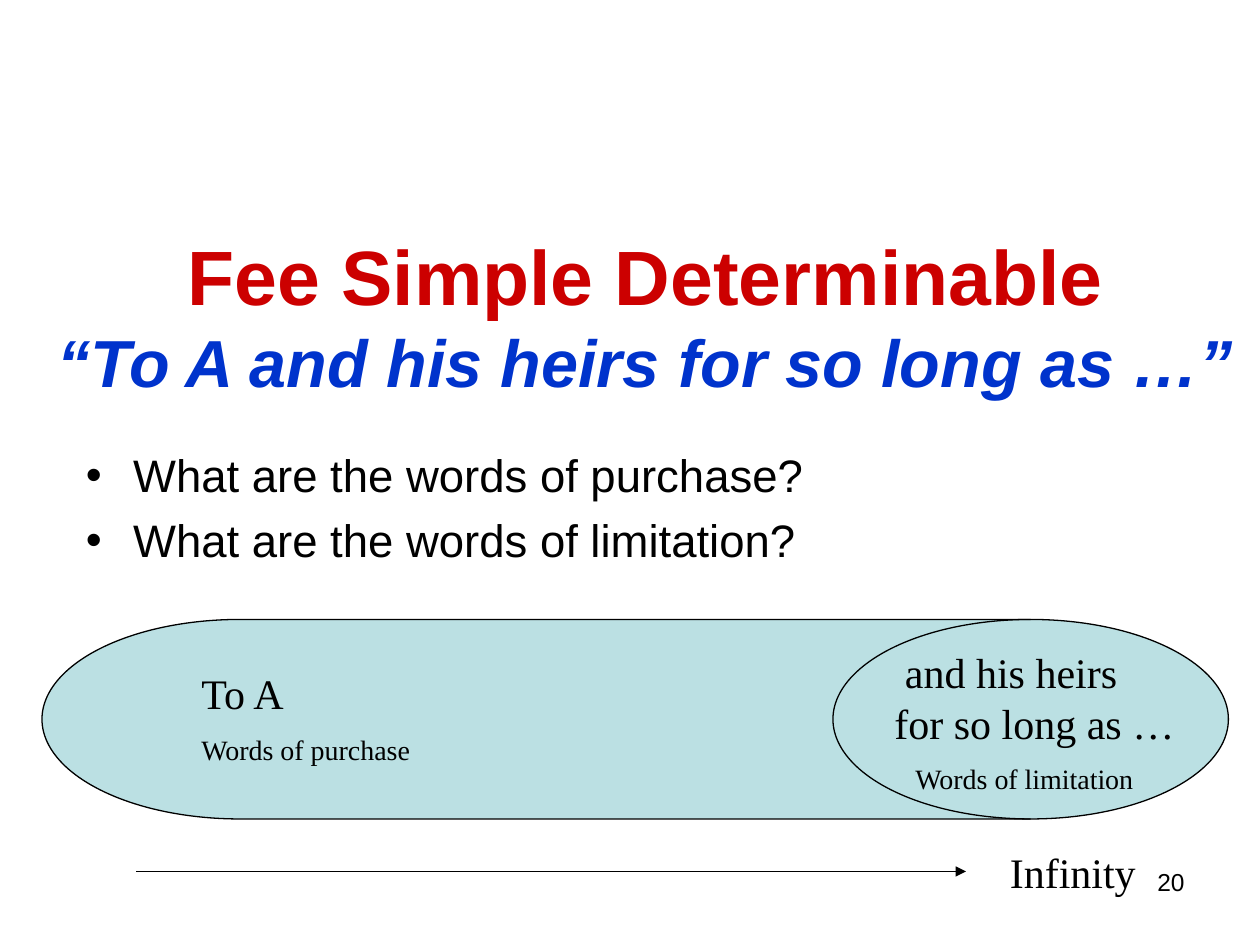
from dataclasses import dataclass
from typing import Optional

from lxml.etree import SubElement
from pptx import Presentation
from pptx.dml.color import RGBColor
from pptx.enum.shapes import MSO_CONNECTOR as Connector, MSO_SHAPE as Preset
from pptx.enum.text import MSO_ANCHOR as Anchor, PP_ALIGN as Align
from pptx.oxml.ns import qn
from pptx.util import Pt

COLORS = {"black": "000000", "red": "CC0000", "blue": "0033CC", "teal": "BBE0E3"}
SANS, SERIF = "Arial", "Times New Roman"


@dataclass
class Line:
    text: str
    size: float
    font: str = SERIF
    color: str = "black"
    bold: bool = False
    italic: bool = False
    align: Align = Align.LEFT
    before: float = 0
    margin: float = 0
    indent: float = 0
    bullet: Optional[str] = None


@dataclass
class TextBlock:
    left: float
    top: float
    width: float
    height: float
    lines: list[Line]
    anchor: Anchor = Anchor.TOP


def rgb(name: str) -> RGBColor:
    return RGBColor.from_string(COLORS[name])


def add_line(paragraph, line: Line) -> None:
    properties = paragraph._p.get_or_add_pPr()
    properties.set("marL", str(Pt(line.margin)))
    properties.set("indent", str(Pt(line.indent)))
    if line.bullet:
        SubElement(properties, qn("a:buFont")).set("typeface", SANS)
        SubElement(properties, qn("a:buChar")).set("char", line.bullet)
    paragraph.alignment = line.align
    paragraph.space_before = Pt(line.before)
    paragraph.text = line.text
    formats = {"name": line.font, "size": Pt(line.size), "bold": line.bold, "italic": line.italic}
    for run in paragraph.runs:
        for attribute, value in formats.items():
            setattr(run.font, attribute, value)
        run.font.color.rgb = rgb(line.color)


def add_block(slide, block: TextBlock) -> None:
    box = slide.shapes.add_textbox(
        Pt(block.left), Pt(block.top), Pt(block.width), Pt(block.height))
    frame = box.text_frame
    frame.word_wrap = True
    frame.vertical_anchor = block.anchor
    for index, line in enumerate(block.lines):
        add_line(frame.add_paragraph() if index else frame.paragraphs[0], line)


def add_drum(slide, left: float, top: float, width: float, height: float) -> None:
    drum = slide.shapes.add_shape(
        Preset.FLOWCHART_DIRECT_ACCESS_STORAGE, Pt(left), Pt(top), Pt(width), Pt(height))
    drum.shadow.inherit = False
    drum.fill.solid()
    drum.fill.fore_color.rgb = rgb("teal")
    drum.line.color.rgb = rgb("black")
    drum.line.width = Pt(0.75)


def add_arrow(slide, start: float, end: float, y: float) -> None:
    arrow = slide.shapes.add_connector(Connector.STRAIGHT, Pt(start), Pt(y), Pt(end), Pt(y))
    arrow.line.color.rgb = rgb("black")
    arrow.line.width = Pt(0.75)
    SubElement(arrow.line._get_or_add_ln(), qn("a:tailEnd")).set("type", "triangle")
    SubElement(arrow._element.spPr, qn("a:effectLst"))


def question(text: str, before: float = 0) -> Line:
    return Line(text, 26, SANS, before=before, margin=27, indent=-27, bullet="•")


TITLE = TextBlock(18, 114, 702, 132, [
    Line("Fee Simple Determinable", 44, SANS, "red", bold=True, align=Align.CENTER),
    Line("“To A and his heirs for so long as …”", 38, SANS, "blue",
         bold=True, italic=True, align=Align.CENTER),
], Anchor.MIDDLE)

QUESTIONS = TextBlock(42, 252, 648, 84, [
    question("What are the words of purchase?"),
    question("What are the words of limitation?", before=6),
])

LABELS = [
    # Grant and its words of purchase
    TextBlock(108, 378, 180, 65, [
        Line("To A", 24),
        Line("Words of purchase", 16, before=8),
    ]),
    # Duration and its words of limitation
    TextBlock(504, 366, 198, 94, [
        Line("and his heirs\vfor so long as …", 24, indent=6),
        Line("Words of limitation", 16, before=8, margin=12),
    ]),
]

INFINITY = TextBlock(570, 480, 150, 36, [Line("Infinity", 24)])
SLIDE_NUMBER = TextBlock(516, 492, 168, 37, [Line("20", 14, SANS, align=Align.RIGHT)])


def main() -> None:
    presentation = Presentation()
    presentation.slide_width, presentation.slide_height = Pt(720), Pt(540)
    slide = presentation.slides.add_slide(presentation.slide_layouts[6])

    # Heading and questions
    add_block(slide, TITLE)
    add_block(slide, QUESTIONS)

    # Estate drawn as a drum, with its labels
    add_drum(slide, 24, 354, 678, 114)
    for label in LABELS:
        add_block(slide, label)

    # Timeline and slide number
    add_arrow(slide, 78, 552, 498)
    add_block(slide, INFINITY)
    add_block(slide, SLIDE_NUMBER)

    presentation.save("out.pptx")


if __name__ == "__main__":
    main()
